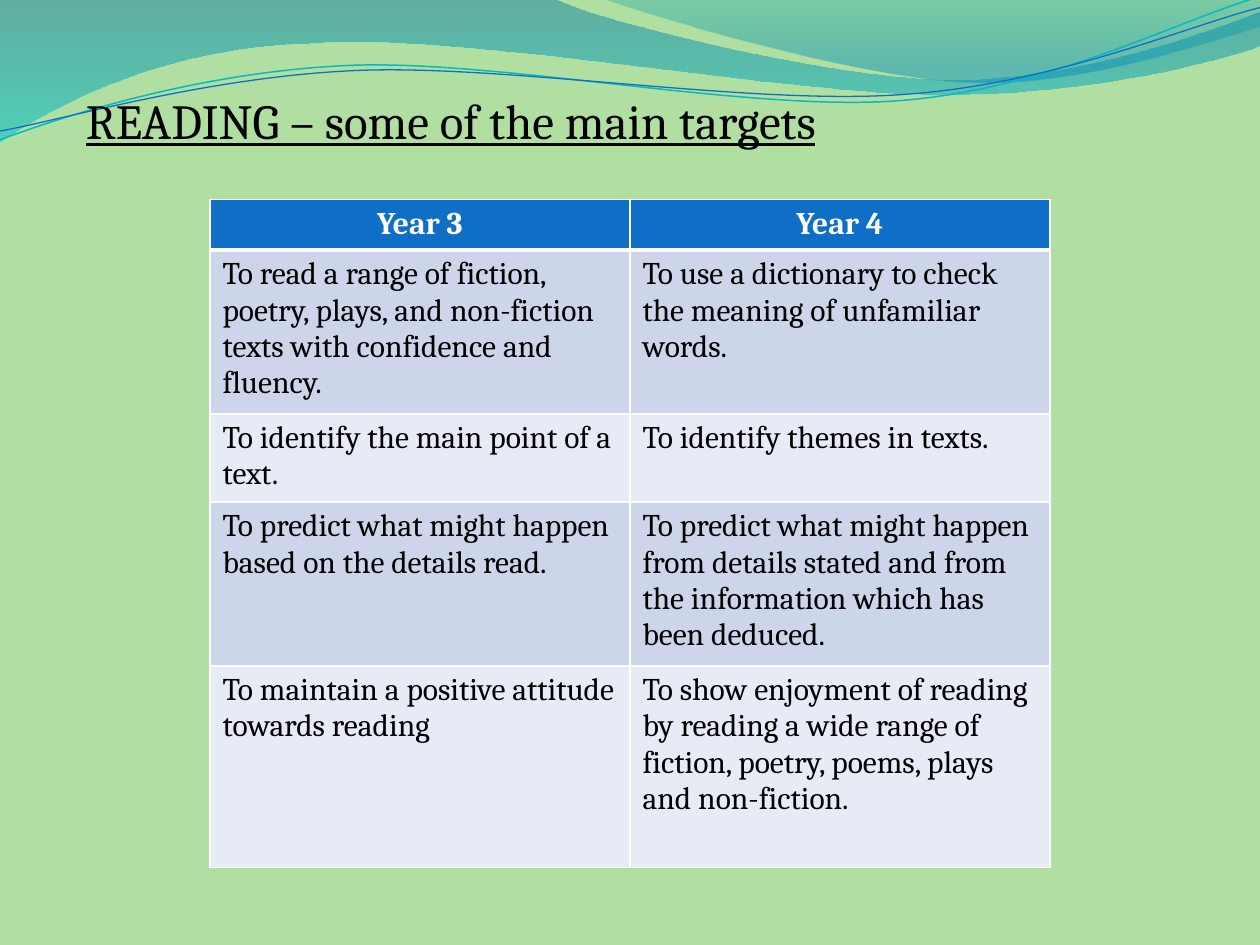
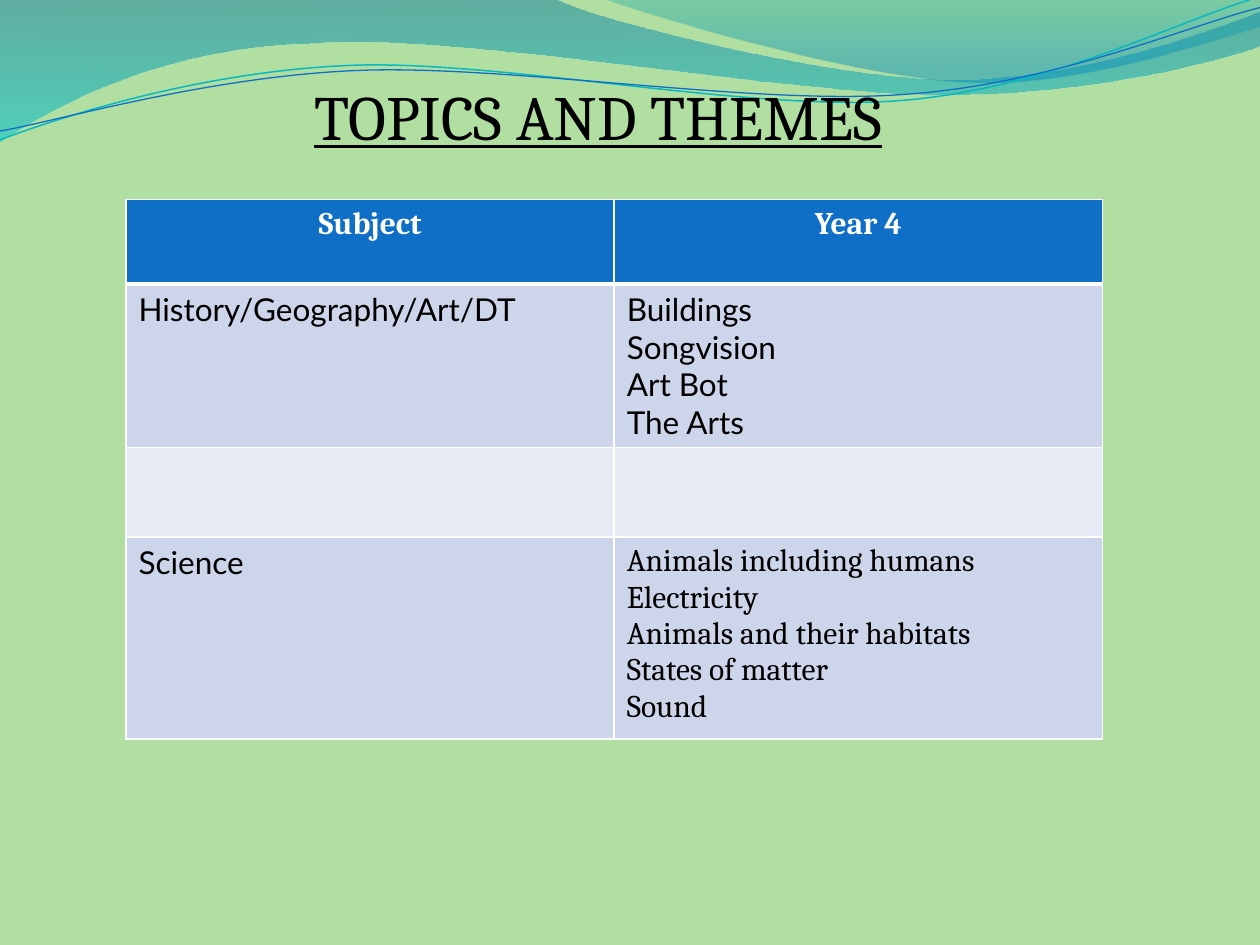
from itertools import product

from lxml import etree
from pptx import Presentation
from pptx import util as u
from pptx.dml.color import RGBColor
from pptx.enum import text
from pptx.oxml import ns

COLUMNS, ROWS = 10, 7.5
SLIDE_WIDTH, SLIDE_HEIGHT = u.Inches(10), u.Inches(7.5)
TABLE_TOP = 19 / 12

BACKGROUND = RGBColor(0xB0, 0xDF, 0xA1)
BLACK = RGBColor(0x00, 0x00, 0x00)
WHITE = RGBColor(0xFF, 0xFF, 0xFF)
BLUE = RGBColor(0x0F, 0x6F, 0xC6)
CYAN = RGBColor(0x0A, 0xB8, 0xBF)
BAND_DARK = RGBColor(0xCC, 0xD5, 0xEA)
BAND_LIGHT = RGBColor(0xE7, 0xEB, 0xF5)
DEEP_TEAL = RGBColor(0x00, 0x74, 0xA1)
BRIGHT_TEAL = RGBColor(0x00, 0xC6, 0xCF)
GREEN_TEAL = RGBColor(0x00, 0xA1, 0xA9)
SEA_BLUE = RGBColor(0x00, 0x8B, 0xBF)

SERIF, SANS = "Cambria", "Lato"

WIDE_WAVE = [
    (0, 0), (4.4, -0.01),
    (4.76, 0.17, 6.64, 0.63, 7.58, 0.63), (8.53, 0.63, 9.58, 0.26, 10, 0.09),
    (10.01, 0.36),
    (9.83, 0.44, 8.7, 0.76, 7.46, 0.75), (6.22, 0.75, 3.82, 0.28, 2.57, 0.34),
    (1.29, 0.36, 0.46, 0.83, -0.01, 1.13), (0, 0),
]
RIGHT_WAVE = [
    (4.79, -0.01),
    (5.09, 0.11, 6.82, 0.62, 7.69, 0.65), (8.56, 0.69, 9.61, 0.32, 10, 0.21),
    (10, 0), (4.79, -0.01),
]
CYAN_LINE = [
    (0, 1.11),
    (0.48, 0.93, 1.58, 0.57, 2.77, 0.52), (3.95, 0.47, 5.93, 0.89, 7.13, 0.8),
    (8.33, 0.71, 9.38, 0.15, 9.98, -0.02),
]
BLUE_LINE = [
    (0, 1.04),
    (0.47, 0.96, 1.64, 0.61, 2.83, 0.56), (4.03, 0.51, 5.97, 0.84, 7.17, 0.75),
    (8.36, 0.67, 9.41, 0.21, 10, 0.06),
]

READING_TARGETS = [
    ("Year 3", "Year 4"),
    ("To read a range of fiction, poetry, plays, and non-fiction texts with confidence and fluency.",
     "To use a dictionary to check the meaning of unfamiliar words."),
    ("To identify the main point of a text.", "To identify themes in texts."),
    ("To predict what might happen based on the details read.",
     "To predict what might happen from details stated and from the information which has been deduced."),
    ("To maintain a positive attitude towards reading",
     "To show enjoyment of reading by reading a wide range of fiction, poetry, poems, plays and non-fiction."),
]
TOPICS = [
    ("Subject", "Year 4"),
    ("History/Geography/Art/DT", "Buildings\nSongvision\nArt Bot\nThe Arts"),
    ("", ""),
    ("Science", "Animals including humans\nElectricity\nAnimals and their habitats\nStates of matter\nSound"),
]
TOPIC_SANS_CELLS = {(1, 0), (1, 1), (3, 0)}


def across(columns):
    return round(SLIDE_WIDTH * columns / COLUMNS)


def down(rows):
    return round(SLIDE_HEIGHT * rows / ROWS)


def write(frame, content, size=18, font=SERIF, color=BLACK, bold=False,
          underline=False, align=text.PP_ALIGN.LEFT):
    for index, line in enumerate(content.split("\n")):
        paragraph = frame.add_paragraph() if index else frame.paragraphs[0]
        paragraph.alignment = align
        run = paragraph.add_run()
        run.text = line
        run.font.size = u.Pt(size)
        run.font.name = font
        run.font.color.rgb = color
        run.font.bold = bold
        run.font.underline = underline


def bend_segments(shape, segments):
    lines = list(shape.element.iter(ns.qn("a:lnTo")))
    for line, segment in zip(lines, segments):
        if len(segment) == 2:
            continue
        curve = etree.Element(ns.qn("a:cubicBezTo"))
        for x, y in zip(segment[::2], segment[1::2]):
            etree.SubElement(curve, ns.qn("a:pt"), x=str(across(x) - shape.left),
                             y=str(down(y) - shape.top))
        line.getparent().replace(line, curve)


def add_outline(slide, segments, close):
    anchors = [(across(segment[-2]), down(segment[-1])) for segment in segments]
    builder = slide.shapes.build_freeform(*anchors[0])
    builder.add_line_segments(anchors[1:], close=close)
    shape = builder.convert_to_shape()
    bend_segments(shape, segments[1:])
    shape.shadow.inherit = False
    return shape


def add_wave(slide, segments, stops):
    shape = add_outline(slide, segments, close=True)
    shape.line.fill.background()
    shape.fill.gradient()
    shape.fill.gradient_angle = 270
    for stop, (position, color, _) in zip(shape.fill.gradient_stops, stops):
        stop.position = position
        stop.color.rgb = color
    colors = shape.element.spPr.iter(ns.qn("a:srgbClr"))
    for color, (_, _, opacity) in zip(colors, stops):
        etree.SubElement(color, ns.qn("a:alpha"), val=str(opacity * 1000))


def add_wave_line(slide, segments, color, width):
    shape = add_outline(slide, segments, close=False)
    shape.fill.background()
    shape.line.color.rgb = color
    shape.line.width = u.Pt(width)


def decorate_layout(layout, slide):
    layout.background.fill.solid()
    layout.background.fill.fore_color.rgb = BACKGROUND
    for placeholder in list(layout.placeholders):
        placeholder.element.getparent().remove(placeholder.element)
    add_wave(slide, WIDE_WAVE, [(0, DEEP_TEAL, 45), (1, BRIGHT_TEAL, 55)])
    add_wave(slide, RIGHT_WAVE, [(0, GREEN_TEAL, 30), (0.8, SEA_BLUE, 45)])
    add_wave_line(slide, CYAN_LINE, CYAN, 0.85)
    add_wave_line(slide, BLUE_LINE, BLUE, 0.75)
    layout_tree = layout.element.find(f".//{ns.qn('p:spTree')}")
    for shape in list(slide.shapes):
        layout_tree.append(shape.element)


def add_title(slide, content, left, top, width, height, wrap=True, **style):
    box = slide.shapes.add_textbox(across(left), down(top), across(width), down(height))
    box.text_frame.word_wrap = wrap
    box.text_frame.auto_size = text.MSO_AUTO_SIZE.SHAPE_TO_FIT_TEXT
    write(box.text_frame, content, underline=True, **style)


def add_border(cell, side, width):
    line = etree.SubElement(cell._tc.get_or_add_tcPr(), ns.qn(f"a:ln{side}"),
                            w=str(u.Pt(width)))
    fill = etree.SubElement(line, ns.qn("a:solidFill"))
    etree.SubElement(fill, ns.qn("a:srgbClr"), val=str(WHITE))


def format_cell(cell, row, content, font):
    heading_edges = {(0, "B"), (1, "T")}
    for side in "LRTB":
        add_border(cell, side, 3 if (row, side) in heading_edges else 1)
    cell.fill.solid()
    if row == 0:
        cell.fill.fore_color.rgb = BLUE
        style = dict(color=WHITE, bold=True, align=text.PP_ALIGN.CENTER)
    else:
        cell.fill.fore_color.rgb = BAND_DARK if row % 2 else BAND_LIGHT
        style = dict(font=font)
    if content:
        write(cell.text_frame, content, **style)


def add_grid_table(slide, entries, left, width, row_heights, sans_cells=()):
    column_count = len(entries[0])
    frame = slide.shapes.add_table(len(entries), column_count, across(left),
                                   down(TABLE_TOP), across(width), down(sum(row_heights)))
    table = frame.table
    for column in table.columns:
        column.width = across(width / column_count)
    for row, height in zip(table.rows, row_heights):
        row.height = down(height)
    for row, column in product(range(len(entries)), range(column_count)):
        font = SANS if (row, column) in sans_cells else SERIF
        format_cell(table.cell(row, column), row, entries[row][column], font)


def main():
    presentation = Presentation()
    presentation.slide_width, presentation.slide_height = SLIDE_WIDTH, SLIDE_HEIGHT
    layout = presentation.slide_layouts[6]
    reading = presentation.slides.add_slide(layout)
    decorate_layout(layout, reading)
    topics = presentation.slides.add_slide(layout)

    add_title(reading, "READING – some of the main targets", 7 / 12, 0.67, 6.49, 0.57,
              wrap=False, size=28)
    add_grid_table(reading, READING_TARGETS, COLUMNS / 6, COLUMNS * 2 / 3,
                   [0.4, 1.3, 0.7, 1.3, 1.6])

    add_title(topics, "TOPICS AND THEMES", 19 / 12, 9 / 16, 6.33, 0.71,
              size=36, align=text.PP_ALIGN.CENTER)
    add_grid_table(topics, TOPICS, 1, 7.75, [0.67, 1.29, 0.71, 1.6], TOPIC_SANS_CELLS)

    presentation.save("out.pptx")


if __name__ == "__main__":
    main()
